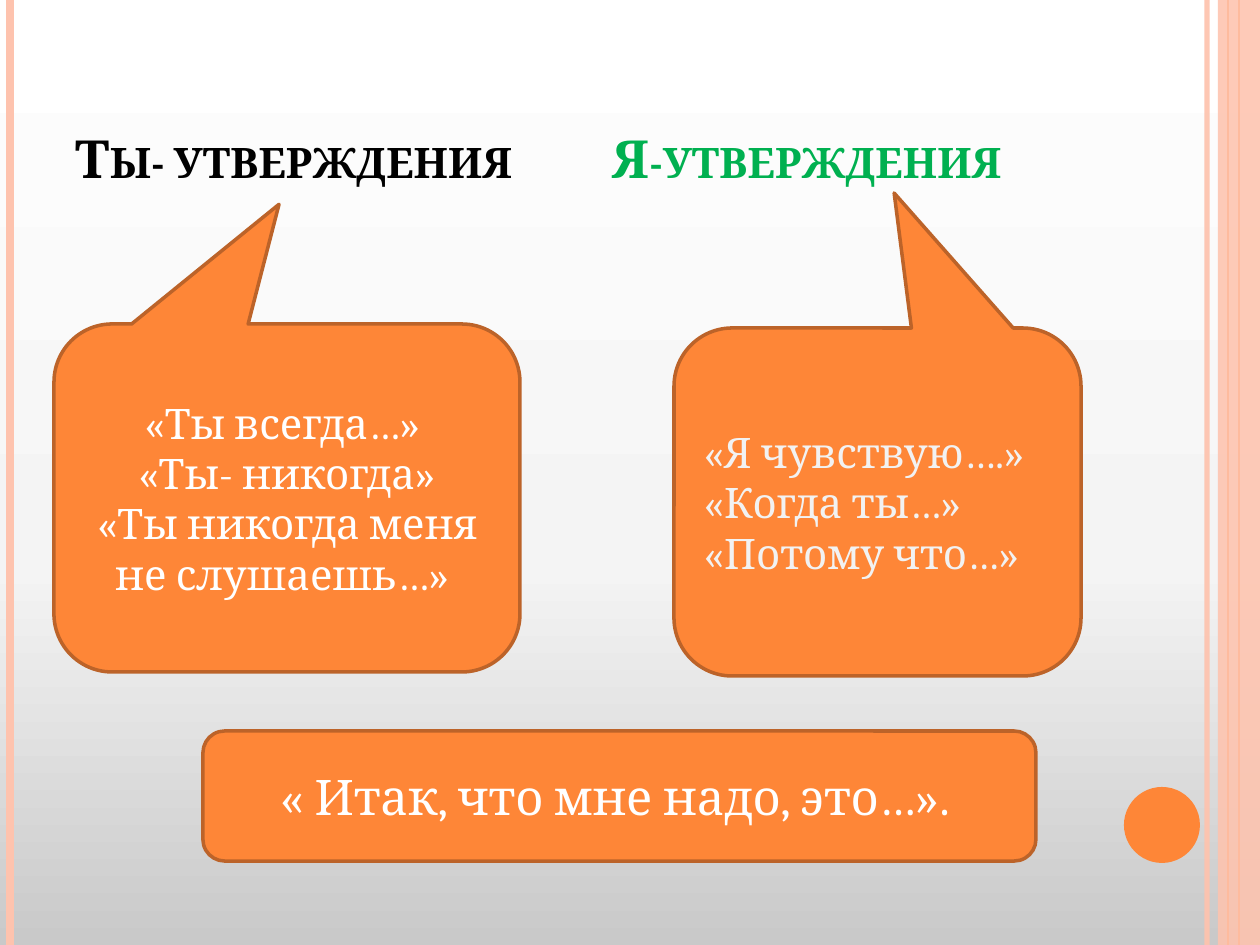
"""Build the slide that compares you-statements with I-statements."""
from copy import deepcopy

from lxml import etree
from pptx import Presentation
from pptx.dml.color import RGBColor
from pptx.enum.shapes import MSO_CONNECTOR, MSO_SHAPE
from pptx.enum.text import MSO_ANCHOR, MSO_AUTO_SIZE, PP_ALIGN
from pptx.oxml.ns import qn
from pptx.util import Emu, Pt

STRAIGHT = MSO_CONNECTOR.STRAIGHT
RECTANGLE, OVAL = MSO_SHAPE.RECTANGLE, MSO_SHAPE.OVAL
CALLOUT = MSO_SHAPE.ROUNDED_RECTANGULAR_CALLOUT
ROUNDED_BOX = MSO_SHAPE.FLOWCHART_ALTERNATE_PROCESS
LEFT, CENTER = PP_ALIGN.LEFT, PP_ALIGN.CENTER
MIDDLE, BOTTOM = MSO_ANCHOR.MIDDLE, MSO_ANCHOR.BOTTOM
NO_AUTOFIT = MSO_AUTO_SIZE.NONE

WIDTH, HEIGHT = 1260, 945
FONT = "Cambria"
ORANGE, DARK_ORANGE, PEACH = "FE8637", "BC6329", "FEC3AE"
BACKGROUND = [(0, "C9C9C9"), (0.4, "F4F4F4"), (1, "FFFFFF")]

STRIPES = [(1207, PEACH, 3, 93), (10, PEACH, 4.5, 100),
           (1239, ORANGE, 1.5, 100), (1228, ORANGE, 0.75, 100)]
BAND = (1218, 0, 42, HEIGHT)
DOT = (1124, 787, 76, 76)

TITLE_BOX = (63, 38, 1029, 157)
TITLE_TAB = 537
TITLE = [("Ты- утверждения\t", "000000"), ("Я-утверждения", "00B050")]

BUBBLES = [
    {"kind": ROUNDED_BOX, "box": (203, 731, 833, 130), "adjustments": [],
     "lines": ["« Итак, что мне надо, это…». "],
     "size": 28, "color": "FFFFFF", "align": CENTER},
    {"kind": CALLOUT, "box": (54, 324, 466, 348), "adjustments": [-0.017, -0.844, 0.167],
     "lines": ["«Ты всегда…» ", "«Ты- никогда»", "«Ты никогда меня не слушаешь…» "],
     "size": 24, "color": "FFFFFF", "align": CENTER},
    {"kind": CALLOUT, "box": (674, 328, 407, 348), "adjustments": [0.041, -0.888, 0.167],
     "lines": ["«Я чувствую….»", "«Когда ты…»", "«Потому что…»"],
     "size": 24, "color": "F2F2F2", "align": LEFT},
]


def px(length):
    return Emu(round(length * 914400 / 126))


def rgb(value):
    return RGBColor.from_string(value)


def set_opacity(shape, percent):
    color = shape._element.spPr.find(".//" + qn("a:srgbClr"))
    etree.SubElement(color, qn("a:alpha"), val=str(percent * 1000))


def paint_background(slide):
    fill = slide.background.fill
    fill.gradient()
    fill.gradient_angle = 90
    stop_list = slide.element.find(".//" + qn("a:gsLst"))
    stop_list.append(deepcopy(stop_list[-1]))
    for stop, (position, color) in zip(fill.gradient_stops, BACKGROUND):
        stop.position = position
        stop.color.rgb = rgb(color)


def add_stripe(slide, x, color, width, opacity):
    stripe = slide.shapes.add_connector(STRAIGHT, px(x), 0, px(x), px(HEIGHT))
    stripe.line.color.rgb = rgb(color)
    stripe.line.width = Pt(width)
    if opacity < 100:
        set_opacity(stripe, opacity)
    etree.SubElement(stripe._element.spPr, qn("a:effectLst"))


def add_filled(slide, kind, box, color):
    shape = slide.shapes.add_shape(kind, *map(px, box))
    shape.shadow.inherit = False
    shape.fill.solid()
    shape.fill.fore_color.rgb = rgb(color)
    shape.line.fill.background()
    return shape


def fill_title(title):
    title.left, title.top, title.width, title.height = map(px, TITLE_BOX)
    frame = title.text_frame
    frame.auto_size = NO_AUTOFIT
    frame.vertical_anchor = BOTTOM
    paragraph = frame.paragraphs[0]
    paragraph.alignment = LEFT
    paragraph.font.name, paragraph.font.size, paragraph.font.bold = FONT, Pt(30), True
    tabs = etree.Element(qn("a:tabLst"))
    etree.SubElement(tabs, qn("a:tab"), pos=str(px(TITLE_TAB)), algn="l")
    paragraph._p.pPr.insert(0, tabs)
    for text, color in TITLE:
        run = paragraph.add_run()
        run.text = text
        run.font.color.rgb = rgb(color)
        run._r.get_or_add_rPr().set("cap", "small")


def add_bubble(slide, bubble):
    shape = add_filled(slide, bubble["kind"], bubble["box"], ORANGE)
    shape.line.color.rgb = rgb(DARK_ORANGE)
    shape.line.width = Pt(2)
    for index, value in enumerate(bubble["adjustments"]):
        shape.adjustments[index] = value
    frame = shape.text_frame
    frame.word_wrap = True
    frame.vertical_anchor = MIDDLE
    frame.text = "\n".join(bubble["lines"])
    for paragraph in frame.paragraphs:
        paragraph.alignment = bubble["align"]
        paragraph.font.name = FONT
        paragraph.font.size = Pt(bubble["size"])
        paragraph.font.color.rgb = rgb(bubble["color"])


def main():
    presentation = Presentation()
    presentation.slide_width, presentation.slide_height = px(WIDTH), px(HEIGHT)
    slide = presentation.slides.add_slide(presentation.slide_layouts[5])
    paint_background(slide)
    for stripe in STRIPES:
        add_stripe(slide, *stripe)
    set_opacity(add_filled(slide, RECTANGLE, BAND, PEACH), 87)
    add_filled(slide, OVAL, DOT, ORANGE)
    fill_title(slide.shapes.title)
    for bubble in BUBBLES:
        add_bubble(slide, bubble)
    presentation.save("out.pptx")


if __name__ == "__main__":
    main()
